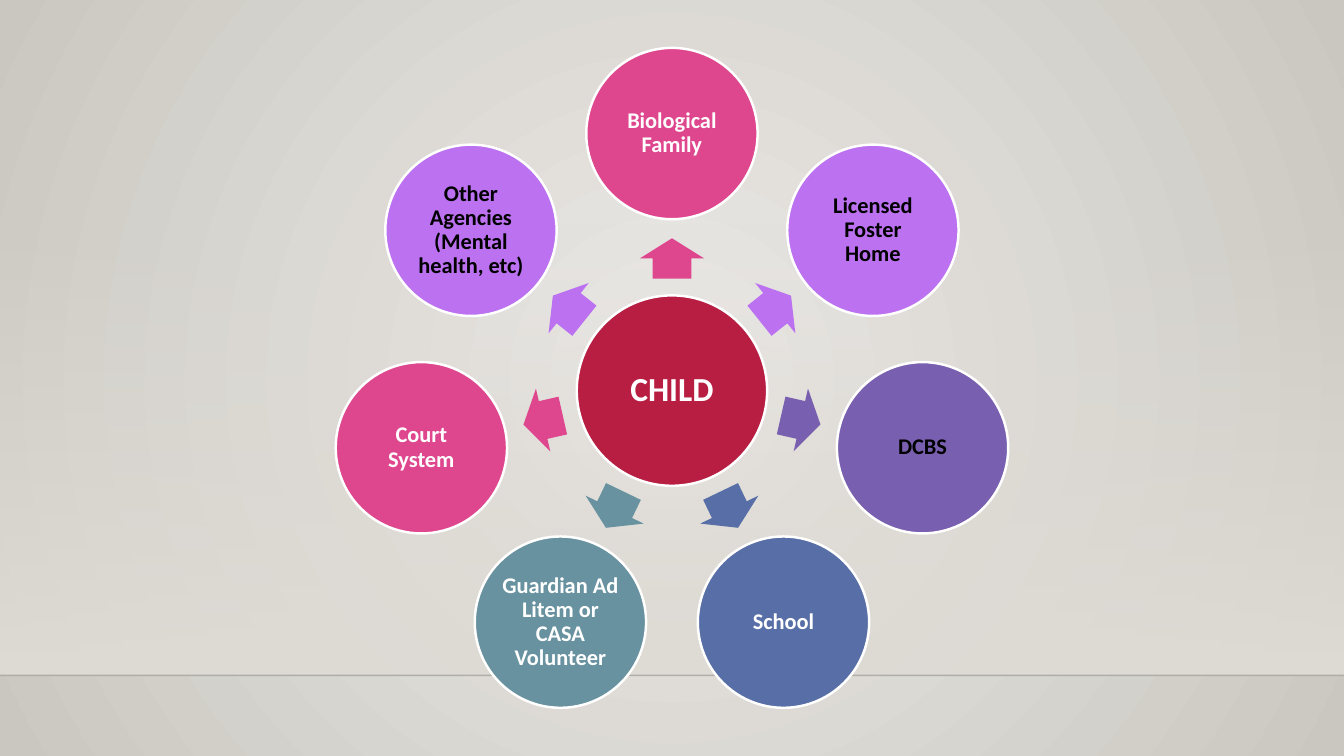
from math import cos, radians, sin

from lxml.etree import SubElement as Sub
from pptx import Presentation
from pptx.dml.color import RGBColor
from pptx.enum.shapes import MSO_CONNECTOR as Link, MSO_SHAPE as Shape
from pptx.enum.text import MSO_ANCHOR as Anchor, PP_ALIGN as Align
from pptx.oxml.ns import qn
from pptx.util import Pt

WIDE, HIGH = 960, 540
HUB, NODE = 136, 122.4          # circle diameters
RING, ORBIT = 183.6, 94.4       # distance of circles and arrows from the hub
WHITE, BLACK = "FFFFFF", "000000"
NODES = [
    ("Biological Family", "DE478E", WHITE),
    ("Licensed Foster Home", "BC72F0", BLACK),
    ("DCBS", "795FAF", BLACK),
    ("School", "586EA6", WHITE),
    ("Guardian Ad Litem or CASA Volunteer", "6892A0", WHITE),
    ("Court System", "DE478E", WHITE),
    ("Other Agencies (Mental health, etc)", "BC72F0", BLACK),
]


def tint(code):
    return RGBColor.from_string(code)


def put(item, form):
    for name, value in form.items():
        setattr(item, name, value)


def fade(part, fill, first, last):
    """Give a two-stop gradient and return its XML element."""
    fill.gradient()
    for stop, code, place in zip(fill.gradient_stops, (first, last), (0, 1)):
        stop.color.rgb = tint(code)
        stop.position = place
    return next(part.element.iter(qn("a:gradFill")))


def clear(node, share):
    """Set the opacity, in percent, of the first colour in an element."""
    color = next(node.iter(qn("a:srgbClr")))
    Sub(color, qn("a:alpha"), val=str(share * 1000))


def add(slide, kind, mid, size, code):
    """Add a filled shape centred on a point."""
    (x, y), (w, h) = mid, size
    shape = slide.shapes.add_shape(kind, Pt(x - w / 2), Pt(y - h / 2), Pt(w), Pt(h))
    shape.shadow.inherit = False
    shape.fill.solid()
    shape.fill.fore_color.rgb = tint(code)
    shape.line.fill.background()
    return shape


def disc(slide, mid, size, text, code, ink, points, inset):
    shape = add(slide, Shape.OVAL, mid, (size, size), code)
    shape.line.color.rgb = tint(WHITE)
    shape.line.width = Pt(1.75)
    frame = shape.text_frame
    sides = ("left", "top", "right", "bottom")
    put(frame, {f"margin_{side}": Pt(inset) for side in sides})
    put(frame, {"word_wrap": True, "vertical_anchor": Anchor.MIDDLE})
    para = frame.paragraphs[0]
    put(para, {"text": text, "alignment": Align.CENTER, "line_spacing": 0.9})
    put(para.font, {"name": "Calibri", "size": Pt(points), "bold": True})
    para.font.color.rgb = tint(ink)


def scene(slide, left, top, wide, high):
    # Round glow over the whole slide
    grad = fade(slide, slide.background.fill, "ECEAE7", "CAC7C1")
    grad.remove(grad.find(qn("a:lin")))
    glow = Sub(grad, qn("a:path"), path="circle")
    Sub(glow, qn("a:fillToRect"), {side: "50000" for side in "ltrb"})

    # Wall that fades in down to the floor
    floor = top + high
    wall = add(slide, Shape.RECTANGLE, (left + wide / 2, top + high / 2),
               (wide, high), "DFDBD5")
    grad = fade(wall, wall.fill, "DFDBD5", "DFDBD5")
    wall.fill.gradient_angle = 270
    clear(grad, 0)

    # Floor line
    edge = slide.shapes.add_connector(
        Link.STRAIGHT, Pt(left), Pt(floor), Pt(left + wide), Pt(floor))
    edge.line.color.rgb = tint("000001")
    edge.line.width = Pt(1)
    props = edge.element.spPr
    clear(props, 20)
    Sub(props, qn("a:effectLst"))


def wheel(slide, left, top, wide, high):
    # Hub
    mid = x, y = left + wide / 2, top + high / 2
    disc(slide, mid, HUB, "CHILD", "B71E42", WHITE, 24, 2.4)

    # Arrows and circles, clockwise from the top
    for i, (text, code, ink) in enumerate(NODES):
        turn = 360 * i / len(NODES) - 90
        dx, dy = cos(radians(turn)), sin(radians(turn))
        arrow = add(slide, Shape.RIGHT_ARROW, (x + ORBIT * dx, y + ORBIT * dy),
                    (28.8, 46), code)
        arrow.adjustments[0] = 0.6
        arrow.adjustments[1] = 0.5
        arrow.rotation = turn % 360
        disc(slide, (x + RING * dx, y + RING * dy), NODE, text, code, ink, 16, 1.6)


def main():
    deck = Presentation()
    put(deck, {"slide_width": Pt(WIDE), "slide_height": Pt(HIGH)})
    slide = deck.slides.add_slide(deck.slide_layouts[6])
    scene(slide, 0, 159, WIDE, 323.4)
    wheel(slide, 240, 34, 480, 490)
    deck.save("out.pptx")


if __name__ == "__main__":
    main()
